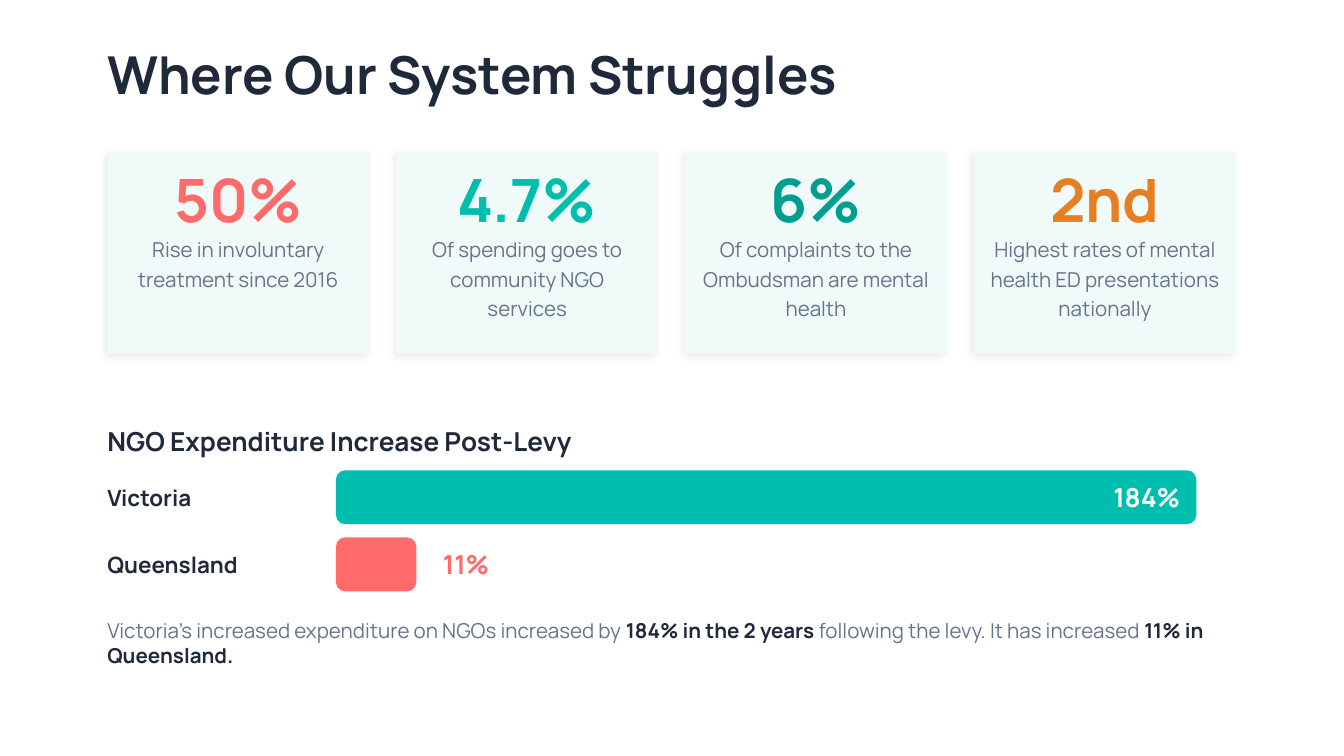
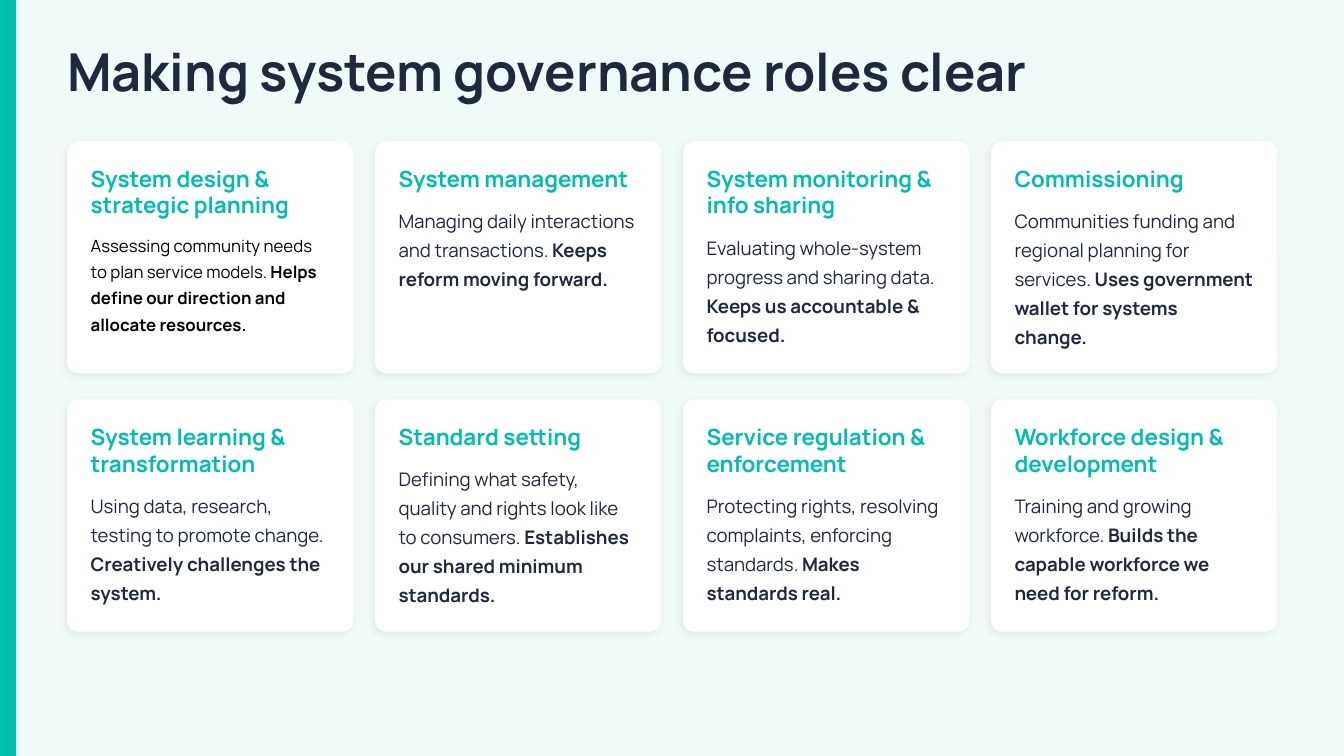
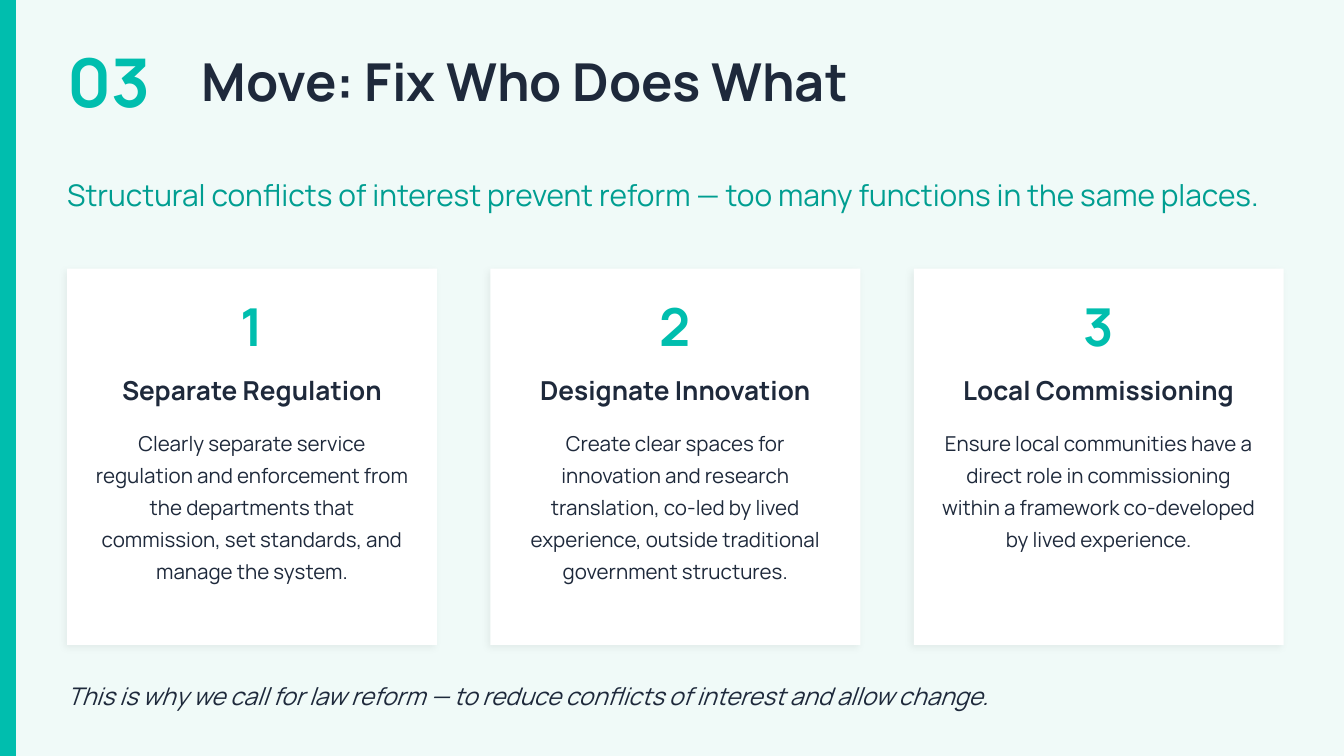
"""Builds three slides on mental health system reform."""
from lxml.etree import SubElement
from pptx import Presentation
from pptx.dml.color import RGBColor
from pptx.enum.shapes import MSO_SHAPE
from pptx.enum.text import MSO_ANCHOR, PP_ALIGN
from pptx.oxml.ns import qn
from pptx.util import Cm, Pt

HUES = {"ink": "1E293B", "gray": "64748B", "teal": "00BEAE", "deep": "009E91",
        "coral": "FF6B6B", "amber": "E67E22", "mint": "F0FAF8",
        "white": "FFFFFF", "black": "000000"}
FONT = "Manrope"
ALIGN = {"left": PP_ALIGN.LEFT, "mid": PP_ALIGN.CENTER, "right": PP_ALIGN.RIGHT}
ANCHOR = {"top": MSO_ANCHOR.TOP, "mid": MSO_ANCHOR.MIDDLE, "low": MSO_ANCHOR.BOTTOM}
WIDE, HIGH = 25.4, 14.29

STATS = [
    ("50%", "coral", "Rise in involuntary treatment since 2016"),
    ("4.7%", "teal", "Of spending goes to community NGO services"),
    ("6%", "deep", "Of complaints to the Ombudsman are mental health"),
    ("2nd", "amber", "Highest rates of mental health ED presentations nationally"),
]
BARS = [("Victoria", "184%", 16.26, "teal"), ("Queensland", "11%", 1.52, "coral")]
NOTE = ("Victoria’s increased expenditure on NGOs increased by *184% in the 2 years*"
        " following the levy. It has increased *11% in Queensland.*")
ROLES = [
    ("System design & strategic planning",
     "Assessing community needs to plan service models. "
     "*Helps define our direction and allocate resources.*", 9, "black"),
    ("System management",
     "Managing daily interactions and transactions. "
     "*Keeps reform moving forward.*", 10, "ink"),
    ("System monitoring & info sharing",
     "Evaluating whole-system progress and sharing data. "
     "*Keeps us accountable & focused.*", 10, "ink"),
    ("Commissioning",
     "Communities funding and regional planning for services. "
     "*Uses government wallet for systems change.*", 10, "ink"),
    ("System learning & transformation",
     "Using data, research, testing to promote change. "
     "*Creatively challenges the system.*", 10, "ink"),
    ("Standard setting",
     "Defining what safety, quality and rights look like to consumers. "
     "*Establishes our shared minimum standards.*", 10, "ink"),
    ("Service regulation & enforcement",
     "Protecting rights, resolving complaints, enforcing standards. "
     "*Makes standards real.*", 10, "ink"),
    ("Workforce design & development",
     "Training and growing workforce. "
     "*Builds the capable workforce we need for reform.*", 10, "ink"),
]
MOVES = [
    ("Separate Regulation",
     "Clearly separate service regulation and enforcement from the departments "
     "that commission, set standards, and manage the system."),
    ("Designate Innovation",
     "Create clear spaces for innovation and research translation, co-led by "
     "lived experience, outside traditional government structures."),
    ("Local Commissioning",
     "Ensure local communities have a direct role in commissioning within a "
     "framework co-developed by lived experience."),
]


def tint(name):
    return RGBColor.from_string(HUES[name])


def write(frame, text, size=11, hue="ink", bold=False, slant=False, align="left",
          line=None, after=None, strong=None):
    para = frame.paragraphs[0]
    if para.runs:
        para = frame.add_paragraph()
    para.alignment = ALIGN[align]
    if line:
        para.line_spacing = line
    if after:
        para.space_after = Pt(after)
    for spot, part in enumerate(text.split("*")):
        if part:
            loud = spot % 2 == 1
            run = para.add_run()
            run.text = part
            font = run.font
            font.name, font.size = FONT, Pt(size)
            font.bold, font.italic = bold or loud, slant
            font.color.rgb = tint(strong if loud and strong else hue)


def pad(frame, left=0, top=0, right=0, low=0, anchor="top"):
    frame.word_wrap = True
    frame.margin_left, frame.margin_top = Cm(left), Cm(top)
    frame.margin_right, frame.margin_bottom = Cm(right), Cm(low)
    frame.vertical_anchor = ANCHOR[anchor]


def label(slide, text, box, anchor="mid", left=0, **style):
    frame = slide.shapes.add_textbox(*map(Cm, box)).text_frame
    pad(frame, left=left, anchor=anchor)
    write(frame, text, **style)


def block(slide, box, hue, curve=None, shade=None):
    kind = MSO_SHAPE.RECTANGLE if curve is None else MSO_SHAPE.ROUNDED_RECTANGLE
    shape = slide.shapes.add_shape(kind, *map(Cm, box))
    if curve is not None:
        shape.adjustments[0] = curve
    shape.fill.solid()
    shape.fill.fore_color.rgb = tint(hue)
    shape.line.fill.background()
    shape.shadow.inherit = False
    if shade:
        cast = SubElement(shape.element.spPr.find(qn("a:effectLst")), qn("a:outerShdw"),
                          blurRad=str(Pt(4)), dist=str(Pt(2)), dir=str(135 * 60000),
                          algn="bl", rotWithShape="0")
        dark = SubElement(cast, qn("a:srgbClr"), val=HUES["black"])
        SubElement(dark, qn("a:alpha"), val=str(shade * 1000))
    return shape


def start(deck, title, box, hue="mint", band=True):
    slide = deck.slides.add_slide(deck.slide_layouts[6])
    slide.background.fill.solid()
    slide.background.fill.fore_color.rgb = tint(hue)
    if band:
        block(slide, (0, 0, 0.3, HIGH), "teal")
    label(slide, title, box, size=28, bold=True)
    return slide


def struggles(deck):
    edge, span = 2.03, 21.34
    slide = start(deck, "Where Our System Struggles", (edge, 0.76, span, 1.27),
                  hue="white", band=False)
    for col, (value, hue, text) in enumerate(STATS):
        left = edge + col * 5.46
        block(slide, (left, 2.87, 4.95, 3.81), "mint", shade=8)
        label(slide, value, (left, 3.12, 4.95, 1.27), size=32, hue=hue, bold=True,
              align="mid")
        label(slide, text, (left + 0.25, 4.39, 4.45, 1.78), anchor="top", hue="gray",
              align="mid", line=1.2)
    label(slide, "NGO Expenditure Increase Post-Levy", (edge, 7.62, span, 1.02),
          anchor="low", size=14, bold=True)
    for row, (name, value, width, hue) in enumerate(BARS):
        top, left = 8.89 + row * 1.27, 6.35
        label(slide, name, (edge, top, 4.32, 1.02), size=12, bold=True)
        bar = block(slide, (left, top, width, 1.02), hue, curve=0.17)
        if width > 4:
            pad(bar.text_frame, left=0.25, right=0.25, anchor="mid")
            write(bar.text_frame, value, size=14, hue="white", bold=True, align="right")
        else:
            label(slide, value, (left + width + 0.25, top, 2.54, 1.02), left=0.25,
                  size=14, hue=hue, bold=True)
    label(slide, NOTE, (edge, 11.68, span, 1.78), anchor="top", hue="gray", strong="ink")


def roles(deck):
    slide = start(deck, "Making system governance roles clear", (1.27, 0.64, 22.86, 1.4))
    for spot, (head, text, size, hue) in enumerate(ROLES):
        row, col = divmod(spot, 4)
        card = block(slide, (1.27 + col * 5.82, 2.67 + row * 4.88, 5.41, 4.39), "white",
                     curve=0.05, shade=6)
        pad(card.text_frame, 0.38, 0.38, 0.38, 0.38)
        write(card.text_frame, head, size=12, hue="teal", bold=True, after=6)
        write(card.text_frame, text, size=size, hue=hue, line=1.3)


def moves(deck):
    edge, span = 1.27, 22.86
    slide = start(deck, "Move: Fix Who Does What", (3.81, 0.89, 15.24, 1.27))
    label(slide, "03", (edge, 0.76, 2.54, 1.52), size=36, hue="teal", bold=True)
    label(slide, "Structural conflicts of interest prevent reform — too many functions "
          "in the same places.", (edge, 3.05, span, 1.27), size=16, hue="deep")
    for col, (head, text) in enumerate(MOVES):
        left = edge + col * 8
        block(slide, (left, 5.08, 6.99, 7.11), "white", shade=6)
        label(slide, str(col + 1), (left, 5.46, 6.99, 1.4), size=28, hue="teal",
              bold=True, align="mid")
        label(slide, head, (left + 0.51, 6.86, 5.97, 1.02), size=14, bold=True,
              align="mid")
        label(slide, text, (left + 0.51, 8, 5.97, 3.68), anchor="top", align="mid",
              line=1.3)
    label(slide, "This is why we call for law reform — to reduce conflicts of interest "
          "and allow change.", (edge, 12.7, span, 0.89), size=13, slant=True)


def main():
    deck = Presentation()
    deck.slide_width, deck.slide_height = Cm(WIDE), Cm(HIGH)
    struggles(deck)
    roles(deck)
    moves(deck)
    deck.save("out.pptx")


if __name__ == "__main__":
    main()
